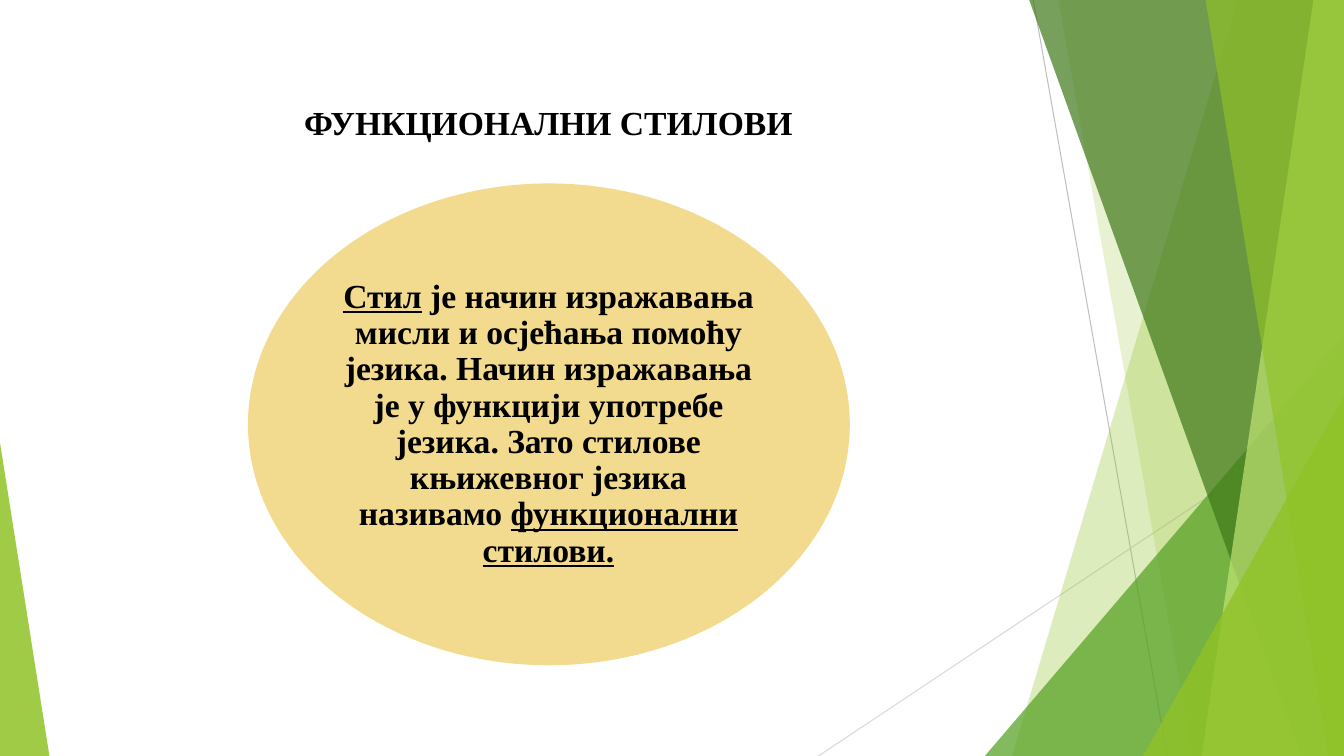
from lxml import etree
from pptx import Presentation, util as u
from pptx.dml.color import RGBColor
from pptx.enum import shapes, text
from pptx.oxml.ns import qn

INK = {
    "lime": "90C226", "green": "54A021", "dark": "3F7819", "pale": "C0E474",
    "gold": "E6B91E", "black": "000000", "gray": "BFBFBF", "mist": "D9D9D9",
}


class Deck:
    """Draws on one slide; lengths are percent of its width and height."""
    font, size = "Times New Roman", 24

    def __init__(self):
        self.prs = Presentation()
        self.prs.slide_width = u.Inches(13.333)
        self.prs.slide_height = u.Inches(7.5)
        self.page = self.prs.slides.add_slide(self.prs.slide_layouts[6]).shapes

    def place(self, x, y):
        return (round(self.prs.slide_width * x / 100),
                round(self.prs.slide_height * y / 100))

    def paint(self, shape, ink, alpha):
        """Fill without outline or shadow; alpha is percent opaque."""
        shape.shadow.inherit = False
        shape.line.fill.background()
        shape.fill.solid()
        shape.fill.fore_color.rgb = RGBColor.from_string(INK[ink])
        color = shape.fill._xPr.find(qn("a:solidFill"))[0]
        etree.SubElement(color, qn("a:alpha"), val=str(alpha * 1000))

    def line(self, start, end, ink):
        rule = self.page.add_connector(
            shapes.MSO_CONNECTOR.STRAIGHT, *self.place(*start), *self.place(*end))
        rule.line.color.rgb = RGBColor.from_string(INK[ink])
        rule.line.width = u.Pt(0.75)
        etree.SubElement(rule._element.spPr, qn("a:effectLst"))

    def band(self, top, foot, ink, alpha):
        """Full-height band from a slanted left edge to the slide's right edge."""
        pen = self.page.build_freeform(*self.place(top, 0))
        corners = [(100, 0), (100, 100), (foot, 100)]
        pen.add_line_segments([self.place(*c) for c in corners], close=True)
        self.paint(pen.convert_to_shape(), ink, alpha)

    def shape(self, kind, box, ink, alpha, peak=None):
        item = self.page.add_shape(kind, *self.place(*box[:2]), *self.place(*box[2:]))
        if peak is not None:
            item.adjustments[0] = peak
        self.paint(item, ink, alpha)

    def wedge(self, x, y, wide, peak, ink, alpha):
        """Right triangle standing on the slide's bottom edge."""
        self.shape(shapes.MSO_SHAPE.ISOSCELES_TRIANGLE,
                   (x, y, wide, 100 - y), ink, alpha, peak)

    def text(self, box, runs, space=1.0):
        """Centred bold text; runs are pairs of wording and underline."""
        frame = self.page.add_textbox(
            *self.place(*box[:2]), *self.place(*box[2:])).text_frame
        frame.word_wrap = True
        frame.vertical_anchor = text.MSO_ANCHOR.MIDDLE
        frame.margin_left = frame.margin_right = 0
        frame.margin_top = frame.margin_bottom = 0
        para = frame.paragraphs[0]
        para.alignment = text.PP_ALIGN.CENTER
        para.line_spacing = space
        for words, under in runs:
            run = para.add_run()
            run.text = words
            run.font.name, run.font.size = self.font, u.Pt(self.size)
            run.font.bold, run.font.underline = True, under
            run.font.color.rgb = RGBColor.from_string(INK["black"])


def main():
    deck = Deck()
    deck.line((76.88, 0), (86.85, 100), "gray")
    deck.line((100, 53.73), (60.9, 100), "mist")

    deck.band(92.1, 75.3, "lime", 30)
    deck.band(78.75, 88.73, "lime", 20)
    deck.wedge(73.28, 44.4, 26.72, 1, "green", 72)
    deck.band(76.58, 96.83, "dark", 70)
    deck.band(97.73, 89.4, "pale", 70)
    deck.band(89.7, 98.85, "lime", 65)
    deck.wedge(85.05, 52.4, 14.95, 1, "lime", 80)
    deck.wedge(0, 58.53, 3.68, 0, "lime", 85)

    deck.text((5.55, 8.93, 70.5, 14.4), [("ФУНКЦИОНАЛНИ СТИЛОВИ", False)])
    deck.shape(shapes.MSO_SHAPE.OVAL, (18.45, 24.27, 44.78, 63.73), "gold", 50)
    deck.text((24.98, 33.6, 31.65, 45.07), [
        ("Стил", True),
        (" је начин изражавања мисли и осјећања помоћу језика. "
         "Начин изражавања је у функцији употребе језика. "
         "Зато стилове књижевног језика називамо ", False),
        ("функционални стилови.", True),
    ], space=0.9)
    deck.prs.save("out.pptx")


if __name__ == "__main__":
    main()
